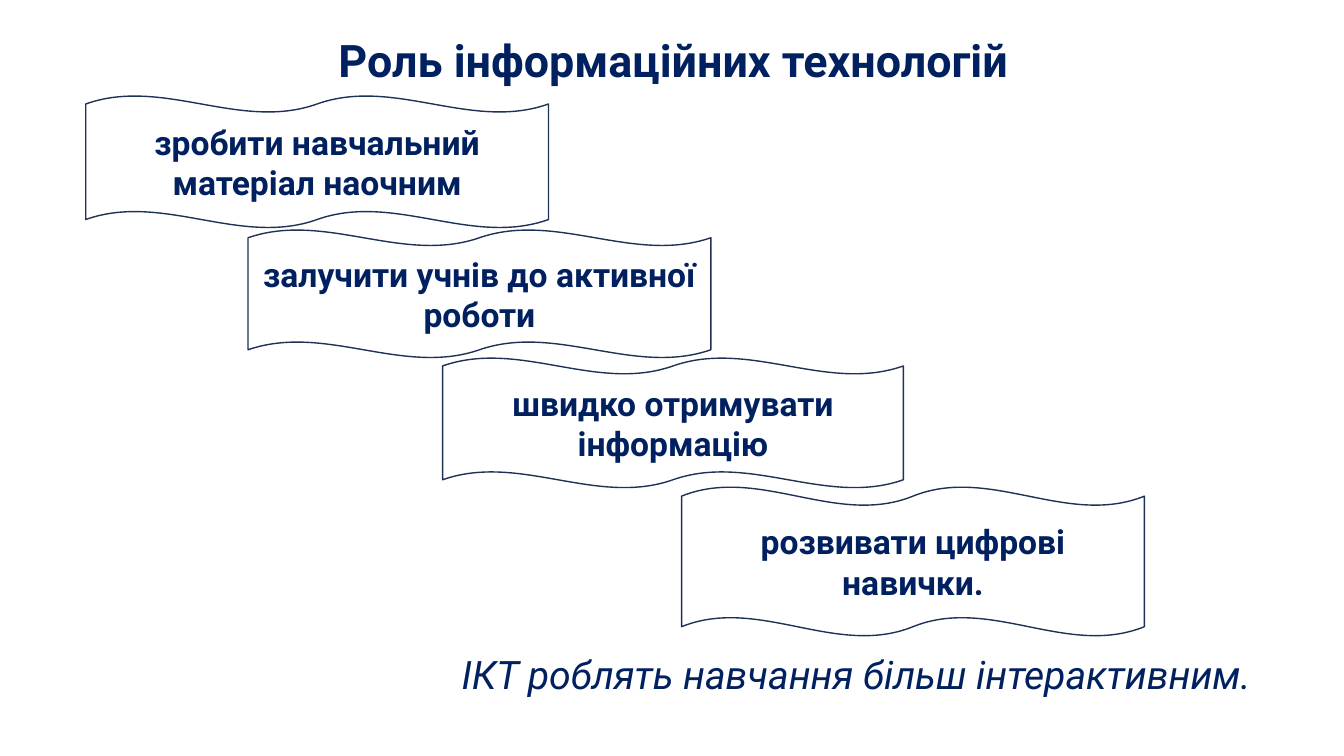
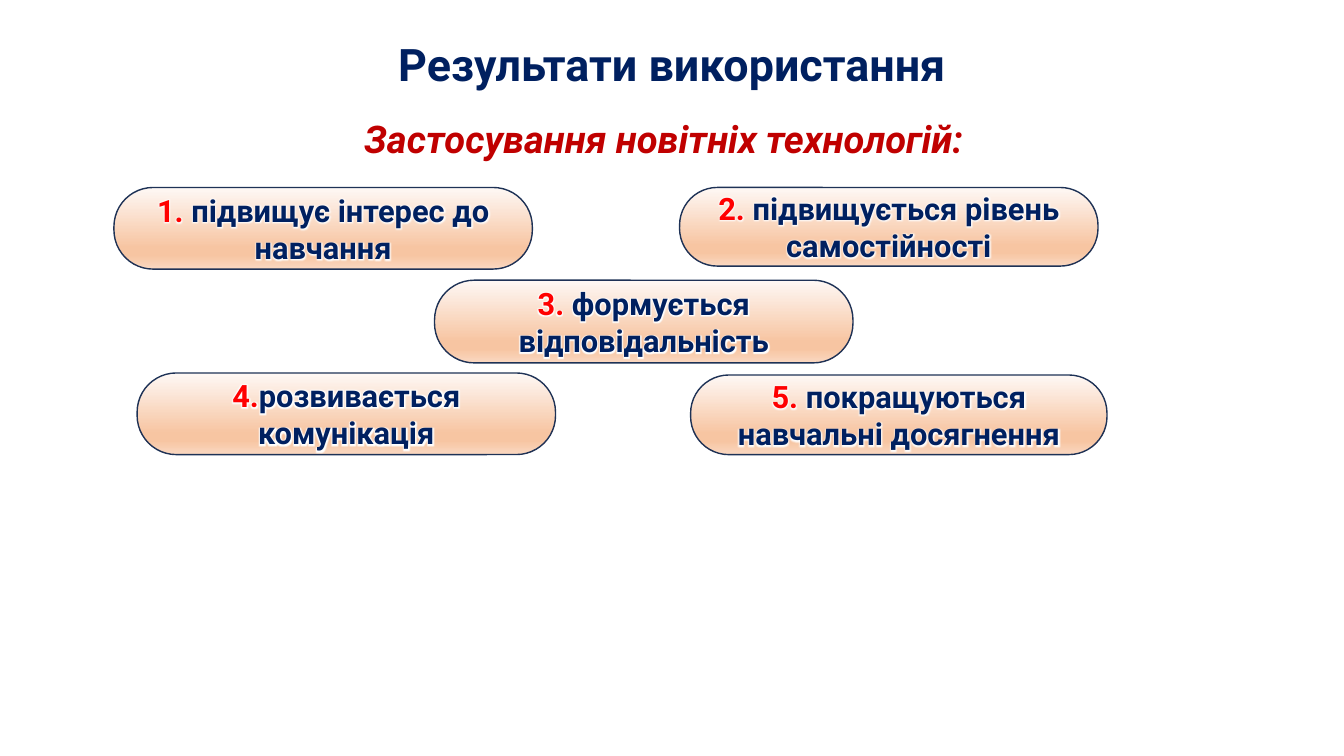
"""Builds two slides on the role and the results of information technologies."""
import pptx
import pptx.dml.color
import pptx.enum.shapes
import pptx.enum.text
import pptx.oxml
import pptx.oxml.ns
import pptx.util

Inches = pptx.util.Inches
MSO_SHAPE = pptx.enum.shapes.MSO_SHAPE
PP_ALIGN = pptx.enum.text.PP_ALIGN
MSO_ANCHOR = pptx.enum.text.MSO_ANCHOR
qn = pptx.oxml.ns.qn

FONT = "Roboto"
NAVY, RED, DARK_RED, OUTLINE, WHITE = "002060", "FF0000", "C00000", "1E3256", "FFFFFF"
STOPS = [(0, "FEF8F5"), (74, "F7C5A2"), (83, "F7C5A2"), (100, "FAD8C1")]
NS = pptx.oxml.ns.nsdecls("a")
GLOW = (f'<a:effectLst {NS}><a:glow rad="63500"><a:srgbClr val="{WHITE}"/>'
        '</a:glow></a:effectLst>')


def rgb(value):
    return pptx.dml.color.RGBColor.from_string(value)


def add_text(slide, box, runs, size, preset=None, bold=True, italic=False,
             align=PP_ALIGN.CENTER, spacing=None):
    pos = [Inches(v) for v in box]
    if preset is None:
        s = slide.shapes.add_textbox(*pos)
    else:
        s = slide.shapes.add_shape(preset, *pos)
        s.shadow.inherit = False
        s.fill.solid()
        s.fill.fore_color.rgb = rgb(WHITE)
        s.line.color.rgb = rgb(OUTLINE)
        s.line.width = pptx.util.Pt(1)
    tf = s.text_frame
    tf.word_wrap = True
    tf.vertical_anchor = MSO_ANCHOR.MIDDLE
    p = tf.paragraphs[0]
    p.alignment = align
    p.line_spacing = spacing
    for text, color in runs:
        r = p.add_run()
        r.text = text
        r.font.name = FONT
        r.font.size = pptx.util.Pt(size)
        r.font.bold = bold
        r.font.italic = italic
        r.font.color.rgb = rgb(color)
    return s


prs = pptx.Presentation()
prs.slide_width, prs.slide_height = Inches(13.33), Inches(7.5)
titles = [
    ("Роль інформаційних технологій", (3.02, 0.31, 7.32, 0.62)),
    ("Результати використання", (2.06, 0.23, 9.21, 0.87)),
]
slides = []
for title, box in titles:
    slide = prs.slides.add_slide(prs.slide_layouts[6])
    add_text(slide, box, [(title, NAVY)], 32, spacing=0.9)
    slides.append(slide)
role, results = slides

waves = [
    ("зробити навчальний матеріал наочним", (0.85, 0.95, 4.59, 1.31)),
    ("залучити учнів до активної роботи", (2.46, 2.28, 4.59, 1.27)),
    ("швидко отримувати інформацію", (4.39, 3.55, 4.57, 1.29)),
    ("розвивати цифрові навички.", (6.76, 4.83, 4.59, 1.48)),
]
for text, box in waves:
    add_text(role, box, [(text, NAVY)], 24, MSO_SHAPE.DOUBLE_WAVE)
add_text(role, (4.48, 6.4, 8.48, 0.57),
         [("ІКТ роблять навчання більш інтерактивним.", NAVY)], 28,
         bold=False, italic=True, align=PP_ALIGN.LEFT)

add_text(results, (2.94, 1.03, 7.29, 0.76),
         [("Застосування новітніх технологій:", DARK_RED)], 27.2,
         italic=True, spacing=0.8)
pills = [
    ("1. ", "підвищує інтерес до навчання", (1.13, 1.86, 4.15, 0.81)),
    ("2. ", "підвищується рівень самостійності", (6.74, 1.86, 4.15, 0.78)),
    ("3. ", "формується відповідальність", (4.31, 2.78, 4.15, 0.82)),
    ("4.", "розвивається комунікація", (1.36, 3.7, 4.15, 0.81)),
    ("5. ", "покращуються навчальні досягнення", (6.85, 3.72, 4.13, 0.79)),
]
for number, text, box in pills:
    s = add_text(results, box, [(number, RED), (text, NAVY)], 22,
                 MSO_SHAPE.ROUNDED_RECTANGLE)
    s.adjustments[0] = 0.48
    s.fill.gradient()
    s.fill.gradient_angle = 270
    stop_list = next(s.element.iter(qn("a:gsLst")))
    for old in list(stop_list):
        stop_list.remove(old)
    for percent, color in STOPS:
        stop_list.append(pptx.oxml.parse_xml(
            f'<a:gs {NS} pos="{percent * 1000}"><a:srgbClr val="{color}"/></a:gs>'))
    for props in s.element.iter(qn("a:rPr")):
        props.find(qn("a:solidFill")).addnext(pptx.oxml.parse_xml(GLOW))

prs.save("out.pptx")
